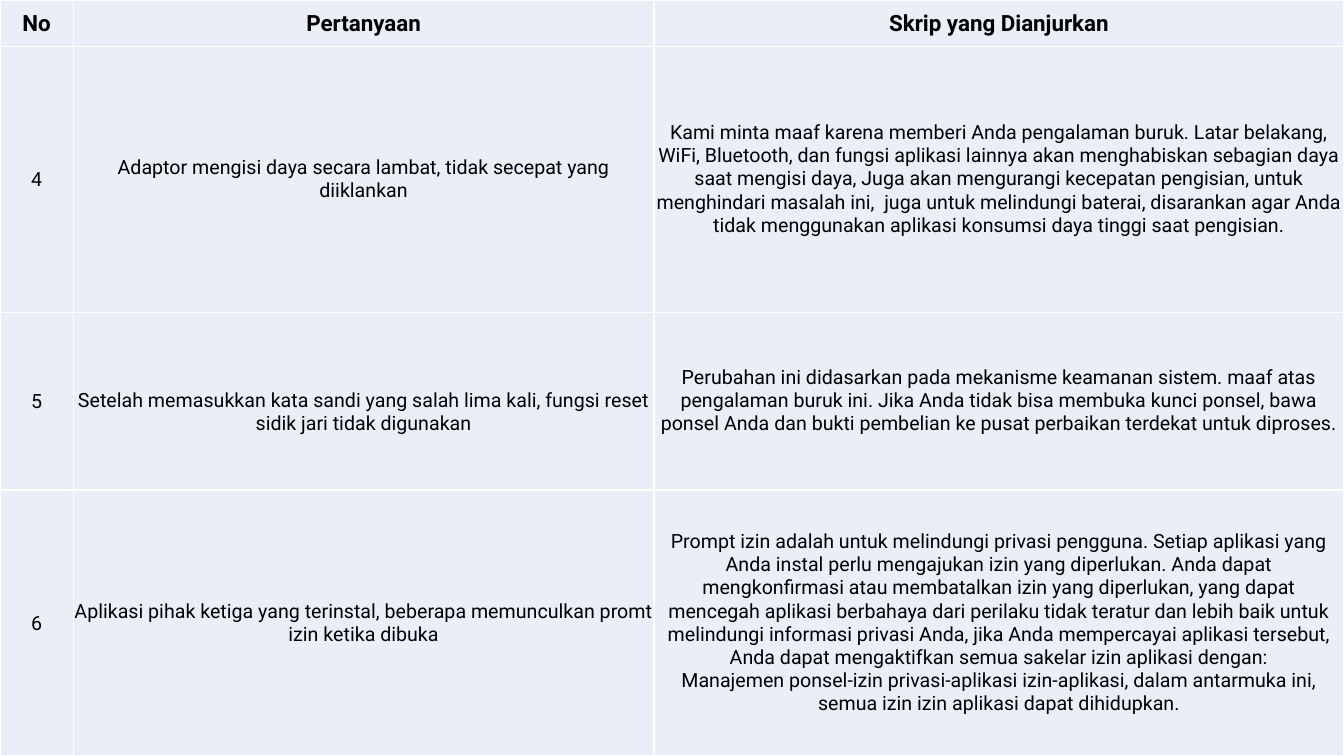
"""Build a slide with a table of customer questions and recommended scripts."""
from lxml.etree import SubElement
from pptx import Presentation
from pptx.dml.color import RGBColor
from pptx.enum.text import MSO_ANCHOR, PP_ALIGN
from pptx.oxml.ns import qn
from pptx.util import Pt

BLACK = RGBColor(0x00, 0x00, 0x00)
WHITE = RGBColor(0xFF, 0xFF, 0xFF)
PALE_BLUE = RGBColor(0xEA, 0xEF, 0xF7)

COLUMN_WIDTHS = [52.3, 414.9, 492.8]
ROW_HEIGHTS = [33, 190, 127, 190]
LINE_HEIGHT = 16.5
ROWS = [
    ("No", "Pertanyaan", "Skrip yang Dianjurkan"),
    (
        "4",
        "Adaptor mengisi daya secara lambat, tidak secepat yang diiklankan",
        "Kami minta maaf karena memberi Anda pengalaman buruk. Latar belakang, WiFi, "
        "Bluetooth, dan fungsi aplikasi lainnya akan menghabiskan sebagian daya saat "
        "mengisi daya, Juga akan mengurangi kecepatan pengisian, untuk menghindari "
        "masalah ini,  juga untuk melindungi baterai, disarankan agar Anda tidak "
        "menggunakan aplikasi konsumsi daya tinggi saat pengisian.",
    ),
    (
        "5",
        "Setelah memasukkan kata sandi yang salah lima kali, fungsi reset sidik jari "
        "tidak digunakan",
        "Perubahan ini didasarkan pada mekanisme keamanan sistem. maaf atas pengalaman "
        "buruk ini. Jika Anda tidak bisa membuka kunci ponsel, bawa ponsel Anda dan bukti "
        "pembelian ke pusat perbaikan terdekat untuk diproses.",
    ),
    (
        "6",
        "Aplikasi pihak ketiga yang terinstal, beberapa memunculkan promt izin ketika "
        "dibuka",
        "Prompt izin adalah untuk melindungi privasi pengguna. Setiap aplikasi yang Anda "
        "instal perlu mengajukan izin yang diperlukan. Anda dapat mengkonfirmasi atau "
        "membatalkan izin yang diperlukan, yang dapat mencegah aplikasi berbahaya dari "
        "perilaku tidak teratur dan lebih baik untuk melindungi informasi privasi Anda, "
        "jika Anda mempercayai aplikasi tersebut, Anda dapat mengaktifkan semua sakelar "
        "izin aplikasi dengan:\n"
        "Manajemen ponsel-izin privasi-aplikasi izin-aplikasi, dalam antarmuka ini, semua "
        "izin izin aplikasi dapat dihidupkan.",
    ),
]


def add_borders(cell, color):
    """Draw a one-point line on every side of a cell."""
    properties = cell._tc.get_or_add_tcPr()
    for side in ("a:lnL", "a:lnR", "a:lnT", "a:lnB"):
        line = SubElement(properties, qn(side), w=str(Pt(1)))
        fill = SubElement(line, qn("a:solidFill"))
        SubElement(fill, qn("a:srgbClr"), val=str(color))


presentation = Presentation()
presentation.slide_width = Pt(960)
presentation.slide_height = Pt(540)
slide = presentation.slides.add_slide(presentation.slide_layouts[6])
slide.background.fill.solid()
slide.background.fill.fore_color.rgb = BLACK

table = slide.shapes.add_table(
    len(ROWS), len(COLUMN_WIDTHS), Pt(0), Pt(0), Pt(960), Pt(540)
).table
for column, width in zip(table.columns, COLUMN_WIDTHS):
    column.width = Pt(width)
for row, height in zip(table.rows, ROW_HEIGHTS):
    row.height = Pt(height)

for row_index, texts in enumerate(ROWS):
    is_header = row_index == 0
    for column_index, text in enumerate(texts):
        cell = table.cell(row_index, column_index)
        cell.text = text
        cell.vertical_anchor = MSO_ANCHOR.MIDDLE
        margin = Pt(0.7) if is_header or column_index == 0 else Pt(0)
        cell.margin_left = cell.margin_right = cell.margin_top = margin
        cell.margin_bottom = Pt(0)
        add_borders(cell, WHITE)
        cell.fill.solid()
        cell.fill.fore_color.rgb = PALE_BLUE
        for paragraph in cell.text_frame.paragraphs:
            paragraph.alignment = PP_ALIGN.CENTER
            paragraph.font.name = "Roboto"
            paragraph.font.size = Pt(16 if is_header else 14)
            paragraph.font.bold = is_header
            paragraph.font.color.rgb = BLACK

table.cell(2, 1).margin_top = Pt(LINE_HEIGHT)

presentation.save("out.pptx")
